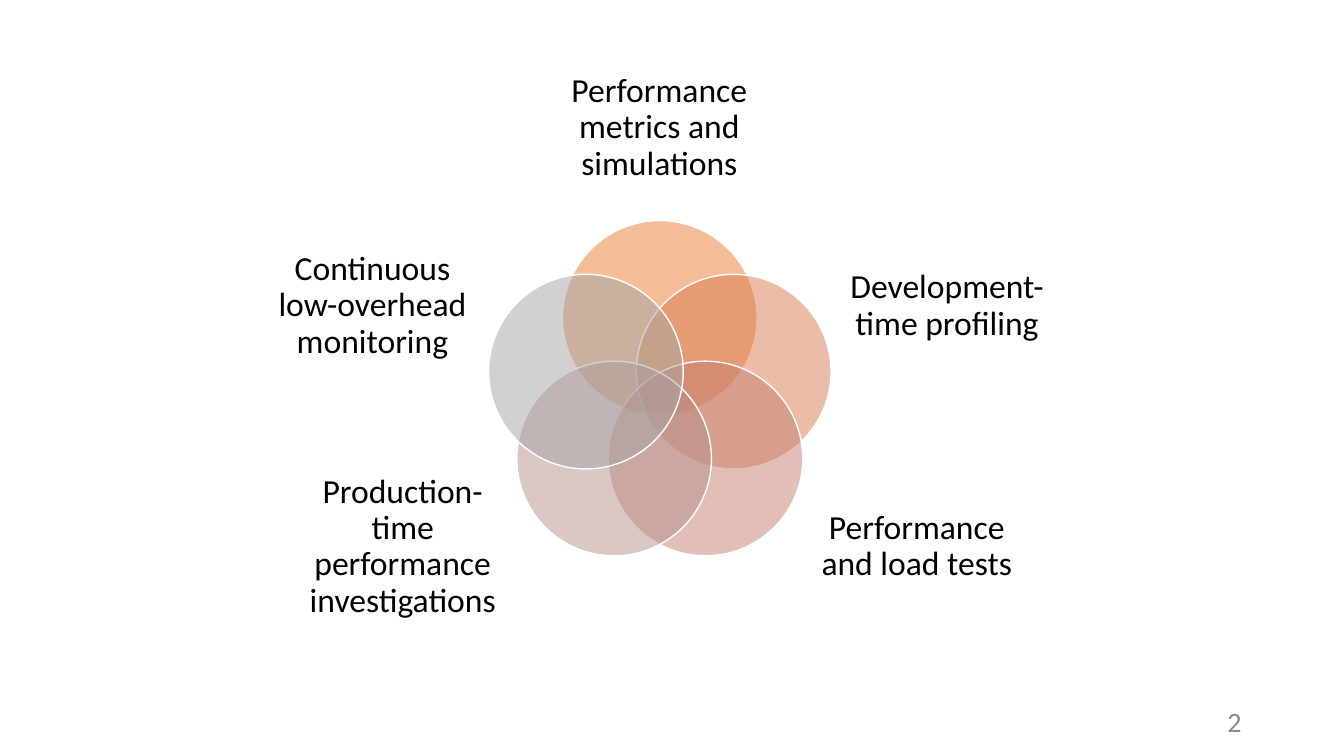
from math import cos, radians, sin

from lxml import etree
from pptx import Presentation
from pptx.dml.color import RGBColor
from pptx.enum.shapes import MSO_SHAPE
from pptx.enum.text import MSO_ANCHOR, PP_ALIGN
from pptx.oxml.ns import qn
from pptx.util import Pt


def color(hex_code):
    """Turn a hex string into an RGB colour."""
    return RGBColor.from_string(hex_code)


class VennSlide:
    """Hold the style and the current slide, and add its elements."""

    font_name = "Calibri"

    def __init__(self, slide):
        """Start an empty diagram on the slide."""
        self.slide = slide
        self.diagram = slide.shapes.add_group_shape()

    def circle(self, center_x, center_y, diameter, fill):
        """Add a half-transparent circle around a center."""
        disc = self.diagram.shapes.add_shape(
            MSO_SHAPE.OVAL, Pt(center_x - diameter / 2), Pt(center_y - diameter / 2),
            Pt(diameter), Pt(diameter))
        disc.shadow.inherit = False
        disc.fill.solid()
        disc.fill.fore_color.rgb = color(fill)
        disc.line.color.rgb = color("FFFFFF")
        disc.line.width = Pt(1)
        fill_code = disc.fill._xPr.find(qn("a:solidFill"))[0]
        etree.SubElement(fill_code, qn("a:alpha"), val="50000")

    def text(self, shapes, words, box, size, hex_code, align):
        """Add a vertically centered text box and return its frame."""
        frame = shapes.add_textbox(*map(Pt, box)).text_frame
        frame.word_wrap = True
        frame.vertical_anchor = MSO_ANCHOR.MIDDLE
        frame.text = words
        paragraph = frame.paragraphs[0]
        paragraph.alignment = align
        font = paragraph.runs[0].font
        font.name = self.font_name
        font.size = Pt(size)
        font.color.rgb = color(hex_code)
        return frame

    def label(self, words, box):
        """Add the label of one circle."""
        frame = self.text(self.diagram.shapes, words, box, 24, "000000", PP_ALIGN.CENTER)
        frame.margin_left = frame.margin_right = 0
        frame.margin_top = frame.margin_bottom = 0
        frame.paragraphs[0].line_spacing = 0.9

    def page_number(self, number, box):
        """Add the page number."""
        self.text(self.slide.shapes, number, box, 20, "8C8C8C", PP_ALIGN.RIGHT)


def main():
    """Build the slide with five overlapping practices."""
    deck = Presentation()
    deck.slide_width, deck.slide_height = Pt(960), Pt(540)
    venn = VennSlide(deck.slides.add_slide(deck.slide_layouts[6]))

    center_x, center_y, orbit, diameter = 471.3, 282.6, 55.5, 139
    side_size = (144.7, 101.5)
    upper_top, lower_top = 167.8, 339.8
    practices = [
        ("Performance metrics and simulations", "ED7D31", (390.3, 44.6, 161.3, 93.6)),
        ("Development-time profiling", "D87A51", (604.1, upper_top, *side_size)),
        ("Performance and load tests", "C48170", (582.5, lower_top, *side_size)),
        ("Production-time performance investigations", "B4908B",
         (215.3, lower_top, *side_size)),
        ("Continuous low-overhead monitoring", "A5A5A5", (193.7, upper_top, *side_size)),
    ]
    for index, (practice, fill, label_box) in enumerate(practices):
        angle = radians(index * 360 / len(practices))
        venn.circle(center_x + orbit * sin(angle), center_y - orbit * cos(angle),
                    diameter, fill)
        venn.label(practice, label_box)

    venn.page_number("2", (678, 500.5, 216, 28.8))
    deck.save("out.pptx")


if __name__ == "__main__":
    main()
